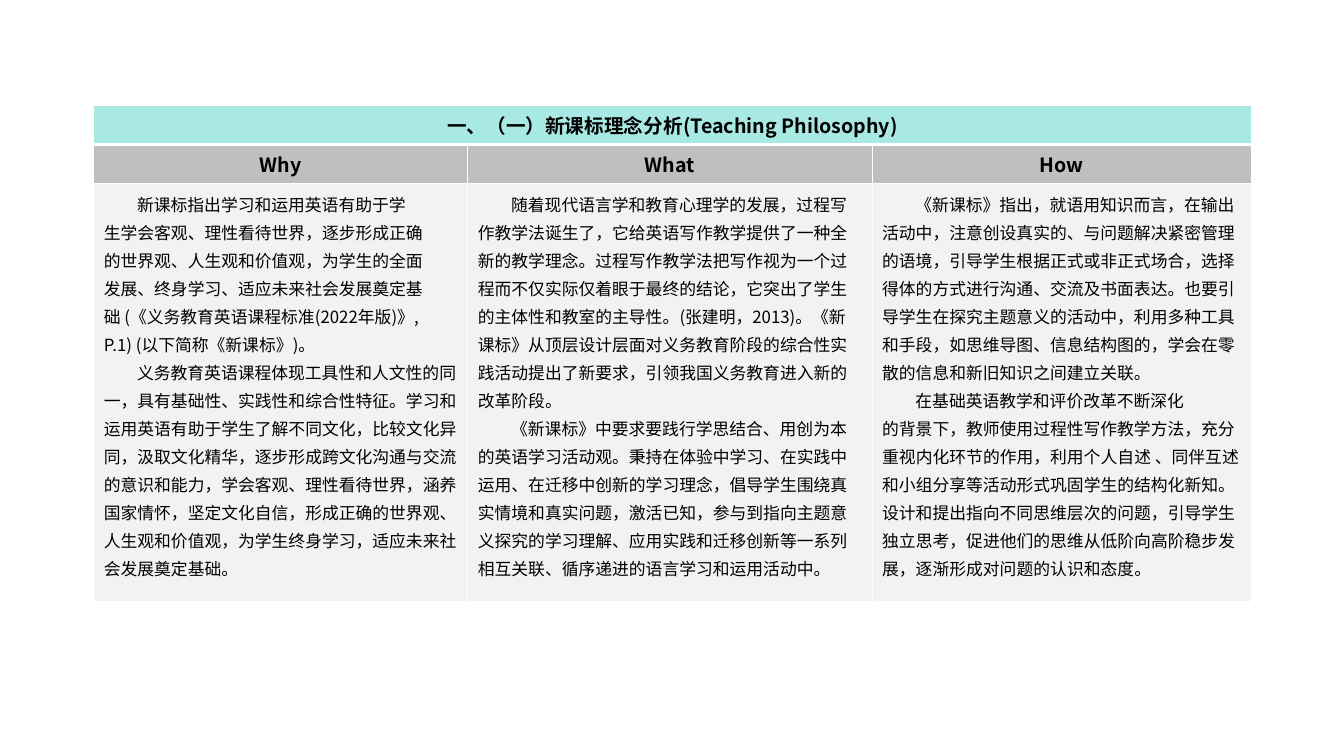
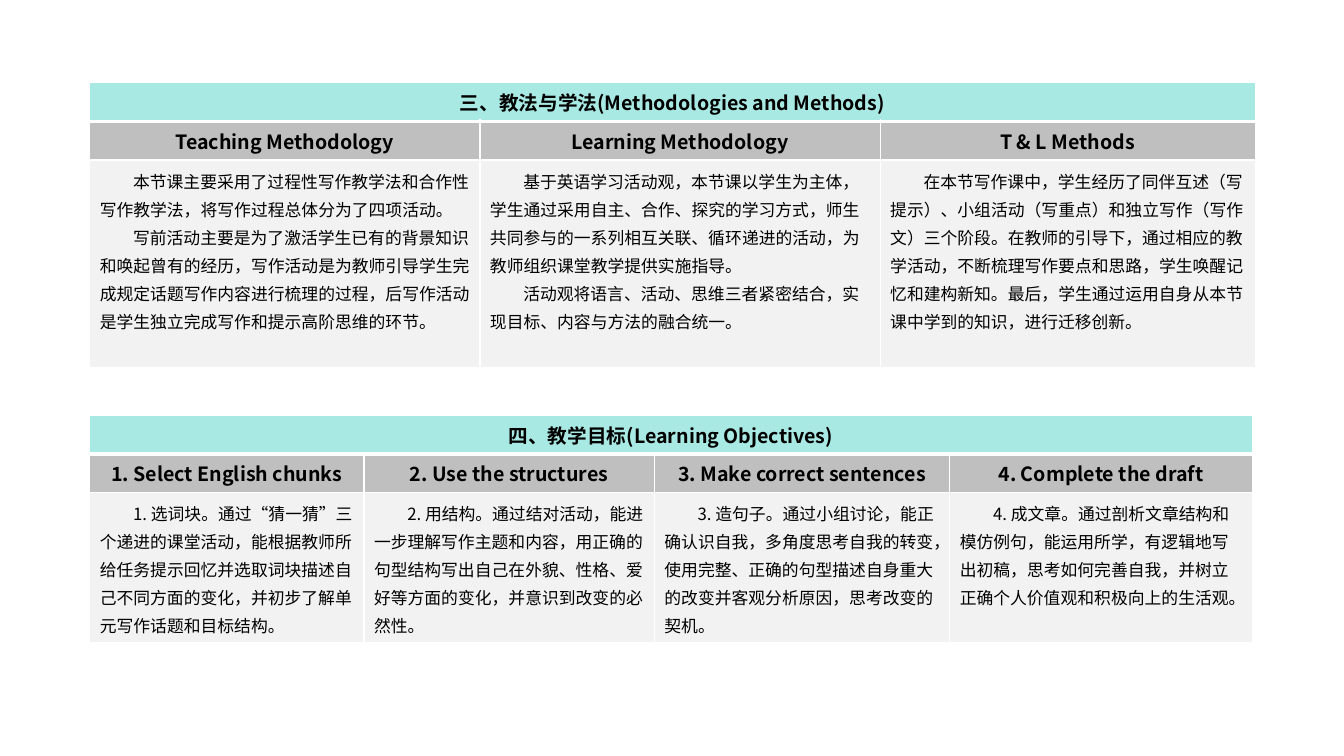
import pptx
import pptx.dml.color
import pptx.enum.text
import pptx.oxml
import pptx.util
from lxml import etree

RGBColor = pptx.dml.color.RGBColor
Inches = pptx.util.Inches
Pt = pptx.util.Pt

FONT = "Noto Sans CJK SC"
BLACK = RGBColor(0x00, 0x00, 0x00)
WHITE = RGBColor(0xFF, 0xFF, 0xFF)
TEAL = RGBColor(0xA9, 0xE9, 0xE4)
GREY = RGBColor(0xBF, 0xBF, 0xBF)
PALE = RGBColor(0xF2, 0xF2, 0xF2)

SLIDE_W, SLIDE_H = 13.33, 7.5
HEAD_H = 0.38
INDENT, FLUSH = 0.33, 0

PHILOSOPHY = [
    ("Why", [
        (INDENT, "新课标指出学习和运用英语有助于学"),
        (FLUSH, "生学会客观、理性看待世界，逐步形成正确"),
        (FLUSH, "的世界观、人生观和价值观，为学生的全面"),
        (FLUSH, "发展、终身学习、适应未来社会发展奠定基"),
        (FLUSH, "础 (《义务教育英语课程标准(2022年版)》,"),
        (FLUSH, "P.1) (以下简称《新课标》)。"),
        (INDENT, "义务教育英语课程体现工具性和人文性的同一，具有基础性、实践性和综合性特征。"
                 "学习和运用英语有助于学生了解不同文化，比较文化异同，汲取文化精华，"
                 "逐步形成跨文化沟通与交流的意识和能力，学会客观、理性看待世界，涵养国家情怀，"
                 "坚定文化自信，形成正确的世界观、人生观和价值观，为学生终身学习，"
                 "适应未来社会发展奠定基础。"),
    ]),
    ("What", [
        (INDENT, "随着现代语言学和教育心理学的发展，过程写作教学法诞生了，"
                 "它给英语写作教学提供了一种全新的教学理念。过程写作教学法把写作视为一个过程"
                 "而不仅实际仅着眼于最终的结论，它突出了学生的主体性和教室的主导性。"
                 "(张建明，2013)。《新课标》从顶层设计层面对义务教育阶段的综合性实践活动"
                 "提出了新要求，引领我国义务教育进入新的改革阶段。"),
        (INDENT, "《新课标》中要求要践行学思结合、用创为本的英语学习活动观。"
                 "秉持在体验中学习、在实践中运用、在迁移中创新的学习理念，"
                 "倡导学生围绕真实情境和真实问题，激活已知，参与到指向主题意义探究的学习理解、"
                 "应用实践和迁移创新等一系列相互关联、循序递进的语言学习和运用活动中。"),
    ]),
    ("How", [
        (INDENT, "《新课标》指出，就语用知识而言，在输出活动中，注意创设真实的、"
                 "与问题解决紧密管理的语境，引导学生根据正式或非正式场合，"
                 "选择得体的方式进行沟通、交流及书面表达。也要引导学生在探究主题意义的活动中，"
                 "利用多种工具和手段，如思维导图、信息结构图的，"
                 "学会在零散的信息和新旧知识之间建立关联。"),
        (INDENT, "在基础英语教学和评价改革不断深化"),
        (FLUSH, "的背景下，教师使用过程性写作教学方法，充分重视内化环节的作用，"
                "利用个人自述 、同伴互述和小组分享等活动形式巩固学生的结构化新知。"
                "设计和提出指向不同思维层次的问题，引导学生独立思考，"
                "促进他们的思维从低阶向高阶稳步发展，逐渐形成对问题的认识和态度。"),
    ]),
]

METHODS = [
    ("Teaching Methodology", [
        (INDENT, "本节课主要采用了过程性写作教学法和合作性写作教学法，"
                 "将写作过程总体分为了四项活动。"),
        (INDENT, "写前活动主要是为了激活学生已有的背景知识和唤起曾有的经历，"
                 "写作活动是为教师引导学生完成规定话题写作内容进行梳理的过程，"
                 "后写作活动是学生独立完成写作和提示高阶思维的环节。"),
    ]),
    ("Learning Methodology", [
        (INDENT, "基于英语学习活动观，本节课以学生为主体，"
                 "学生通过采用自主、合作、探究的学习方式，"
                 "师生共同参与的一系列相互关联、循环递进的活动，为教师组织课堂教学提供实施指导。"),
        (INDENT, "活动观将语言、活动、思维三者紧密结合，实现目标、内容与方法的融合统一。"),
    ]),
    ("T & L Methods", [
        (INDENT, "在本节写作课中，学生经历了同伴互述（写提示）、小组活动（写重点）"
                 "和独立写作（写作文）三个阶段。在教师的引导下，通过相应的教学活动，"
                 "不断梳理写作要点和思路，学生唤醒记忆和建构新知。"
                 "最后，学生通过运用自身从本节课中学到的知识，进行迁移创新。"),
    ]),
]

OBJECTIVES = [
    ("1. Select English chunks", [
        (INDENT, "1. 选词块。通过“猜一猜”三个递进的课堂活动，"
                 "能根据教师所给任务提示回忆并选取词块描述自己不同方面的变化，"
                 "并初步了解单元写作话题和目标结构。"),
    ]),
    ("2. Use the structures", [
        (INDENT, "2. 用结构。通过结对活动，能进一步理解写作主题和内容，"
                 "用正确的句型结构写出自己在外貌、性格、爱好等方面的变化，并意识到改变的必然性。"),
    ]),
    ("3. Make correct sentences", [
        (INDENT, "3. 造句子。通过小组讨论，能正确认识自我，多角度思考自我的转变，"
                 "使用完整、正确的句型描述自身重大的改变并客观分析原因，思考改变的契机。"),
    ]),
    ("4. Complete the draft", [
        (INDENT, "4. 成文章。通过剖析文章结构和模仿例句，能运用所学，有逻辑地写出初稿，"
                 "思考如何完善自我，并树立正确个人价值观和积极向上的生活观。"),
    ]),
]


def add_run(p, text, size, bold):
    """Add a run in the deck font for both Latin and East Asian text."""
    r = p.add_run()
    r.text = text
    r.font.size = Pt(size)
    r.font.bold = bold
    r.font.color.rgb = BLACK
    r.font.name = FONT
    ea = etree.SubElement(r.font._element, pptx.oxml.ns.qn("a:ea"))
    ea.set("typeface", FONT)


def style_cell(cell, fill, top=1, bottom=1):
    """Give a cell white borders and a solid fill."""
    tc_pr = cell._tc.get_or_add_tcPr()
    for side, width in (("L", 1), ("R", 1), ("T", top), ("B", bottom)):
        ln = etree.SubElement(tc_pr, pptx.oxml.ns.qn("a:ln" + side), w=str(Pt(width)))
        solid = etree.SubElement(ln, pptx.oxml.ns.qn("a:solidFill"))
        etree.SubElement(solid, pptx.oxml.ns.qn("a:srgbClr"), val=str(WHITE))
    cell.fill.solid()
    cell.fill.fore_color.rgb = fill


def write_heading(cell, text):
    """Write a bold centred heading in a cell."""
    p = cell.text_frame.paragraphs[0]
    p.alignment = pptx.enum.text.PP_ALIGN.CENTER
    add_run(p, text, 14, True)


def write_body(cell, paragraphs):
    """Write body paragraphs with their first-line indents."""
    tf = cell.text_frame
    for i, (indent, text) in enumerate(paragraphs):
        p = tf.add_paragraph() if i else tf.paragraphs[0]
        p.line_spacing = Pt(20)
        p_pr = p._p.get_or_add_pPr()
        p_pr.set("marL", "0")
        p_pr.set("indent", str(Inches(indent)))
        add_run(p, text, 12, False)


def add_topic_table(slide, left, top, widths, body_h, title, columns):
    """Place a table of one title band, column headings and body texts."""
    heights = (HEAD_H, HEAD_H, body_h)
    table = slide.shapes.add_table(
        len(heights), len(columns), Inches(left), Inches(top),
        Inches(sum(widths)), Inches(sum(heights))).table
    table.first_row = False
    table.horz_banding = False
    for row, height in zip(table.rows, heights):
        row.height = Inches(height)
    for i, (width, (heading, paragraphs)) in enumerate(zip(widths, columns)):
        table.columns[i].width = Inches(width)
        band, head, body = (table.cell(row, i) for row in range(3))
        style_cell(band, TEAL, bottom=3)
        style_cell(head, GREY, top=3)
        style_cell(body, PALE)
        write_heading(head, heading)
        write_body(body, paragraphs)
    band = table.cell(0, 0)
    band.merge(table.cell(0, len(columns) - 1))
    write_heading(band, title)


def philosophy_slide(prs):
    """Build the slide on teaching philosophy."""
    s = prs.slides.add_slide(prs.slide_layouts[6])
    add_topic_table(s, 0.93, 1.05, (3.71, 4.01, 3.76), 4.15,
                    "一、（一）新课标理念分析(Teaching Philosophy)", PHILOSOPHY)


def methods_slide(prs):
    """Build the slide on methods and learning objectives."""
    s = prs.slides.add_slide(prs.slide_layouts[6])
    add_topic_table(s, 0.89, 0.82, (3.87, 3.97, 3.72), 2.06,
                    "三、教法与学法(Methodologies and Methods)", METHODS)
    add_topic_table(s, 0.89, 4.12, (2.72, 2.88, 2.93, 3), 1.49,
                    "四、教学目标(Learning Objectives)", OBJECTIVES)


def main():
    """Build and save the deck."""
    prs = pptx.Presentation()
    prs.slide_width = Inches(SLIDE_W)
    prs.slide_height = Inches(SLIDE_H)
    philosophy_slide(prs)
    methods_slide(prs)
    prs.save("out.pptx")


if __name__ == "__main__":
    main()
